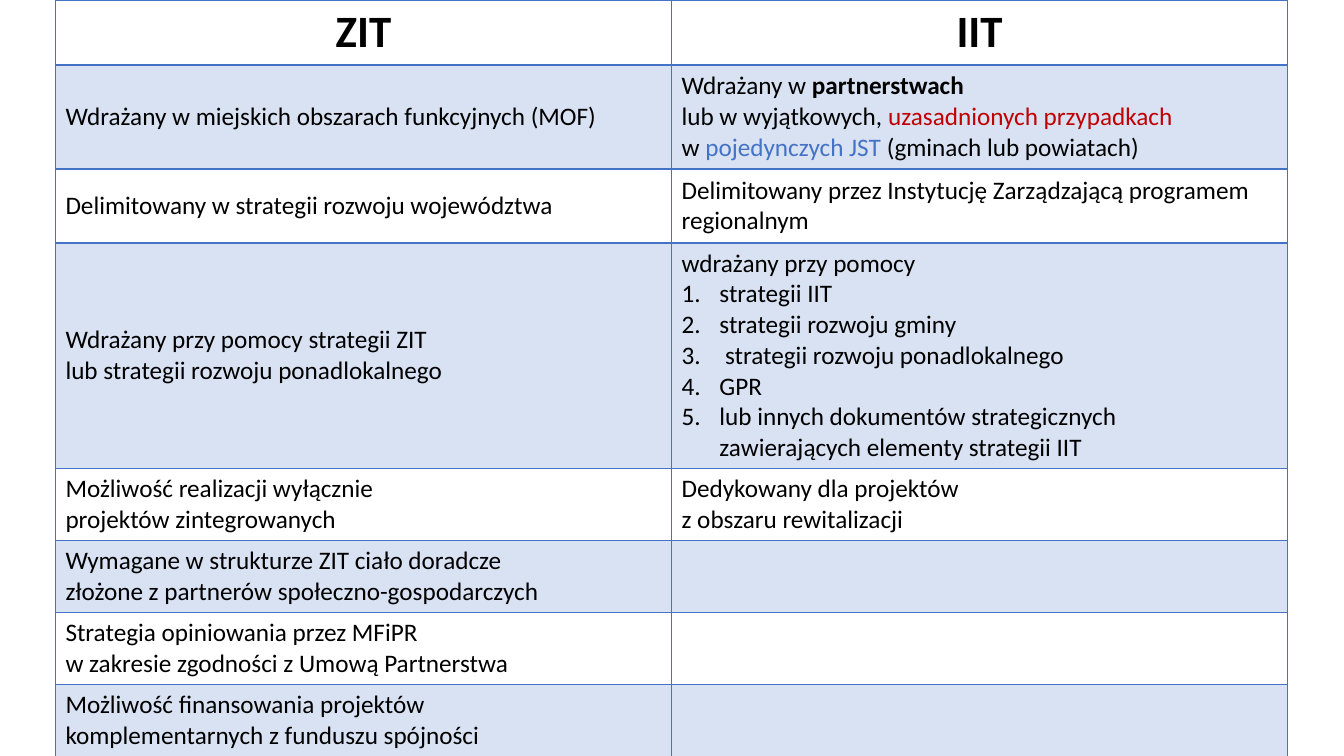
"""Build a slide with a table that compares the ZIT and IIT instruments."""
from lxml import etree
from pptx import Presentation
from pptx.dml.color import RGBColor
from pptx.enum import text
from pptx.oxml import ns
from pptx.util import Pt

COLORS = {"blue": "4472C4", "red": "C00000", "black": "000000"}
ROW_HEIGHTS = [46.4, 74.3, 52.9, 160.8] + [51.4] * 4
COLUMN_WIDTH = 440.1
LIST_INDENT = 27

HEADINGS = ["ZIT", "IIT"]
PARTNERSHIPS = [
    ("Wdrażany w ", {}),
    ("partnerstwach \n", {"bold": True}),
    ("lub w wyjątkowych, ", {}),
    ("uzasadnionych przypadkach\n", {"color": "red"}),
    ("w ", {}),
    ("pojedynczych JST ", {"color": "blue"}),
    ("(gminach lub powiatach)", {}),
]
STRATEGIES = [
    "strategii IIT",
    "strategii rozwoju gminy",
    " strategii rozwoju ponadlokalnego",
    "GPR",
    "lub innych dokumentów strategicznych \nzawierających elementy strategii IIT",
]
COMPARISON = [
    ("Wdrażany w miejskich obszarach funkcyjnych (MOF)", PARTNERSHIPS),
    ("Delimitowany w strategii rozwoju województwa",
     "Delimitowany przez Instytucję Zarządzającą programem regionalnym"),
    ("Wdrażany przy pomocy strategii ZIT \nlub strategii rozwoju ponadlokalnego",
     "wdrażany przy pomocy"),
    ("Możliwość realizacji wyłącznie \nprojektów zintegrowanych",
     "Dedykowany dla projektów \nz obszaru rewitalizacji"),
    ("Wymagane w strukturze ZIT ciało doradcze \n"
     "złożone z partnerów społeczno-gospodarczych", ""),
    ("Strategia opiniowania przez MFiPR \nw zakresie zgodności z Umową Partnerstwa", ""),
    ("Możliwość finansowania projektów\nkomplementarnych z funduszu spójności", ""),
]
STRATEGY_ROW = 3


def rgb(name):
    """Return the named colour."""
    return RGBColor.from_string(COLORS[name])


def write(paragraph, content, size=18, bold=False):
    """Fill a paragraph with plain text or with styled runs."""
    font = paragraph.font
    font.name, font.size, font.bold = "Calibri", Pt(size), bold
    font.color.rgb = rgb("black")
    runs = [(content, {})] if isinstance(content, str) else content
    for wording, style in runs:
        for number, line in enumerate(wording.split("\n")):
            if number:
                paragraph.add_line_break()
            if not line:
                continue
            run = paragraph.add_run()
            run.text = line
            if "bold" in style:
                run.font.bold = style["bold"]
            if "color" in style:
                run.font.color.rgb = rgb(style["color"])


def add_numbered(frame, items):
    """Append a numbered list to a text frame."""
    for item in items:
        paragraph = frame.add_paragraph()
        write(paragraph, item)
        properties = paragraph._p.get_or_add_pPr()
        properties.set("marL", str(Pt(LIST_INDENT)))
        properties.set("indent", str(-Pt(LIST_INDENT)))
        numbering = etree.Element(ns.qn("a:buAutoNum"), type="arabicPeriod")
        properties.insert(0, numbering)


def paint(cell, shaded):
    """Give a cell a translucent blue fill or none."""
    if not shaded:
        cell.fill.background()
        return
    cell.fill.solid()
    cell.fill.fore_color.rgb = rgb("blue")
    tint = cell._tc.tcPr.find(".//" + ns.qn("a:srgbClr"))
    etree.SubElement(tint, ns.qn("a:alpha"), val="20000")


def outline(cell, top=1, bottom=1):
    """Draw blue borders on all four sides of a cell."""
    widths = {"a:lnL": 1, "a:lnR": 1, "a:lnT": top, "a:lnB": bottom}
    for place, (side, width) in enumerate(widths.items()):
        border = etree.Element(ns.qn(side), w=str(Pt(width)))
        fill = etree.SubElement(border, ns.qn("a:solidFill"))
        etree.SubElement(fill, ns.qn("a:srgbClr"), val=COLORS["blue"])
        cell._tc.get_or_add_tcPr().insert(place, border)


def add_comparison(slide):
    """Add the table with its headings and comparison rows."""
    table = slide.shapes.add_table(
        len(ROW_HEIGHTS), len(HEADINGS), Pt(39.6), Pt(0),
        Pt(COLUMN_WIDTH * len(HEADINGS)), Pt(sum(ROW_HEIGHTS))).table
    table.first_row = table.horz_banding = False
    for column in table.columns:
        column.width = Pt(COLUMN_WIDTH)
    for row, height in zip(table.rows, ROW_HEIGHTS):
        row.height = Pt(height)

    for index, contents in enumerate([HEADINGS] + COMPARISON):
        for cell, content in zip(table.rows[index].cells, contents):
            paint(cell, index % 2 == 1)
            outline(cell, top=2 if index == 1 else 1, bottom=2 if index == 0 else 1)
            paragraph = cell.text_frame.paragraphs[0]
            if index == 0:
                write(paragraph, content, size=32, bold=True)
                paragraph.alignment = text.PP_ALIGN.CENTER
            else:
                write(paragraph, content)
                cell.vertical_anchor = text.MSO_ANCHOR.MIDDLE
    add_numbered(table.cell(STRATEGY_ROW, 1).text_frame, STRATEGIES)


def main():
    """Create and save the presentation."""
    deck = Presentation()
    deck.slide_width, deck.slide_height = Pt(960), Pt(540)
    slide = deck.slides.add_slide(deck.slide_layouts[6])
    add_comparison(slide)
    deck.save("out.pptx")


if __name__ == "__main__":
    main()
